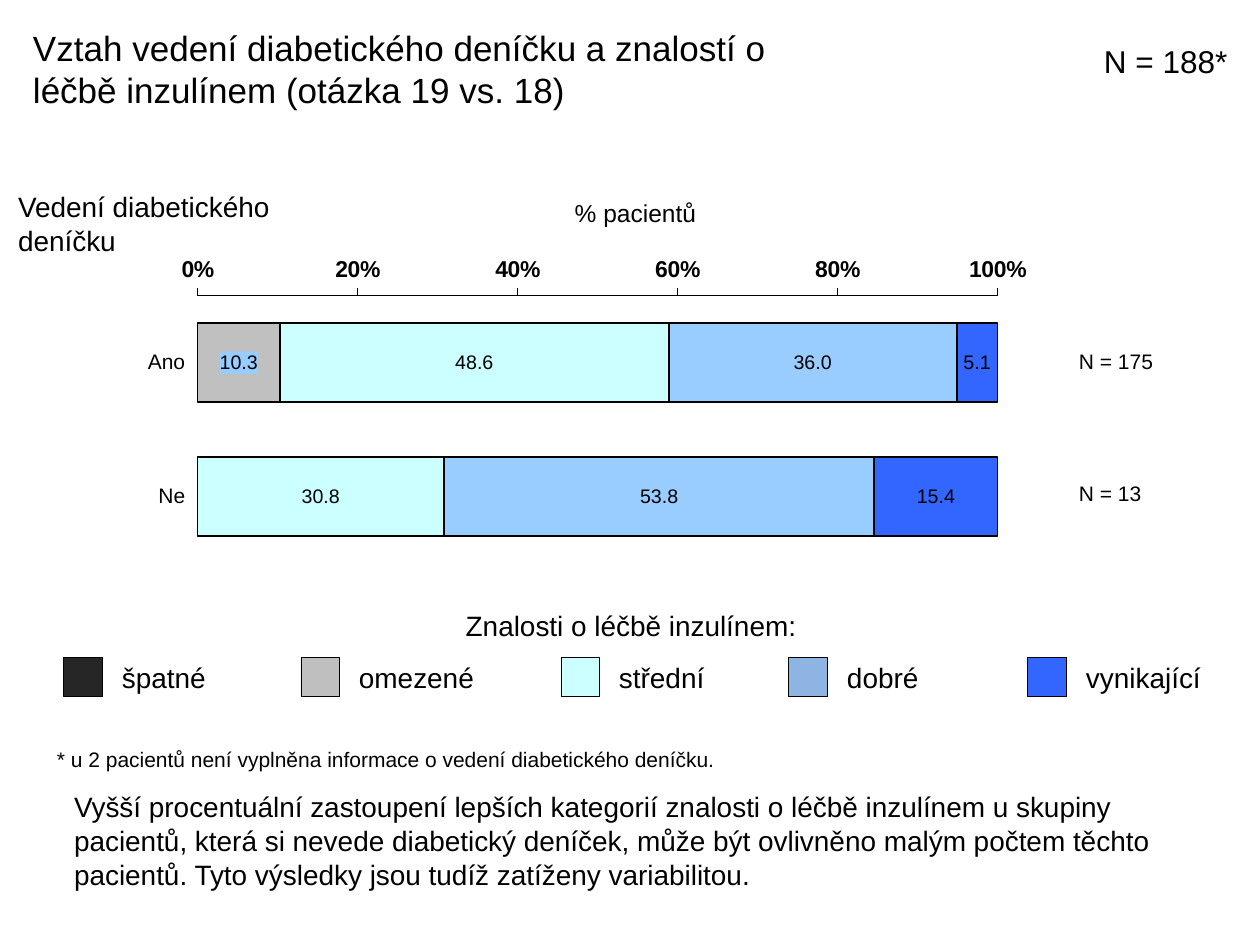
"""Build a slide on diary keeping and knowledge of insulin treatment."""
import pptx
import pptx.chart.data
import pptx.dml.color
import pptx.enum.chart
import pptx.enum.shapes
import pptx.enum.text
import pptx.oxml
import pptx.oxml.ns
import pptx.util

HUES = {
    "ink": "000000", "poor": "262626", "weak": "C0C0C0", "weak key": "BFBFBF",
    "fair": "CCFFFF", "good": "99CCFF", "good key": "8EB4E3", "best": "3366FF",
}
ALIGN = pptx.enum.text.PP_ALIGN
ANCHOR = pptx.enum.text.MSO_ANCHOR
PLOT = {"x": 0.133, "y": 0.199, "w": 0.796, "h": 0.766}


def px(count):
    """Turn pixels into EMU."""
    return pptx.util.Emu(round(count * 914400 / 126))


def hue(name):
    """Look up a colour."""
    return pptx.dml.color.RGBColor.from_string(HUES[name])


def style(font, size, bold=False):
    """Set the deck's font at a size."""
    font.name = "Arial"
    font.size = pptx.util.Pt(size)
    font.bold = bold
    font.color.rgb = hue("ink")


def paint(form, fill, width):
    """Give a fill and an ink outline."""
    form.fill.solid()
    form.fill.fore_color.rgb = hue(fill)
    form.line.color.rgb = hue("ink")
    form.line.width = pptx.util.Pt(width)


def write(frame, text, size=16, align=ALIGN.LEFT, anchor=ANCHOR.TOP, inset=(13, 6), wrap=True):
    """Fill a text frame with formatted text."""
    frame.auto_size = pptx.enum.text.MSO_AUTO_SIZE.NONE
    frame.word_wrap = wrap
    frame.vertical_anchor = anchor
    frame.margin_left = frame.margin_right = px(inset[0])
    frame.margin_top = frame.margin_bottom = px(inset[1])
    para = frame.paragraphs[0]
    para.alignment = align
    run = para.add_run()
    run.text = text
    style(run.font, size)


class Deck:
    """Hold the file and its current slide."""

    def __init__(self):
        """Start a file with one titled slide."""
        self.file = pptx.Presentation()
        self.file.slide_width = px(1260)
        self.file.slide_height = px(945)
        self.slide = self.file.slides.add_slide(self.file.slide_layouts[5])

    def title(self, text, *area, **form):
        """Place and fill the title."""
        head = self.slide.shapes.title
        head.left, head.top, head.width, head.height = map(px, area)
        write(head.text_frame, text, **form)

    def text(self, text, *area, **form):
        """Add a text box."""
        box = self.slide.shapes.add_textbox(*map(px, area))
        write(box.text_frame, text, **form)

    def key(self, text, fill, left, top, side=39):
        """Add a legend swatch and its label."""
        kind = pptx.enum.shapes.MSO_SHAPE.RECTANGLE
        box = self.slide.shapes.add_shape(kind, *map(px, (left, top, side, side)))
        box.shadow.inherit = False
        paint(box, fill, 0.5)
        self.text(text, left + 48, top, 139, side, anchor=ANCHOR.MIDDLE, inset=(10, 10), wrap=False)

    def chart(self, cats, rows, *area):
        """Add a full-width stacked bar chart."""
        data = pptx.chart.data.CategoryChartData()
        data.categories = cats
        for num, (fill, vals) in enumerate(rows, 1):
            data.add_series(f"Series {num}", vals)
        kind = pptx.enum.chart.XL_CHART_TYPE.BAR_STACKED_100
        chart = self.slide.shapes.add_chart(kind, *map(px, area), data).chart
        chart.has_legend = chart.has_title = False
        style(chart.font, 11.5)
        self.axes(chart)
        plot = chart.plots[0]
        plot.gap_width, plot.overlap, plot.vary_by_categories = 70, 100, False
        for line, (fill, vals) in zip(plot.series, rows):
            paint(line.format, fill, 0.94)
            tags = line.data_labels
            tags.show_value = True
            tags.number_format, tags.number_format_is_linked = "0.0", False
            tags.position = pptx.enum.chart.XL_LABEL_POSITION.CENTER
            style(tags.font, 11.2)
        self.shade(plot.series[0].data_labels, "good")
        self.fit(chart)

    def axes(self, chart):
        """Format both axes."""
        marks = pptx.enum.chart.XL_TICK_MARK
        cat, val = chart.category_axis, chart.value_axis
        cat.reverse_order = True
        cat.major_tick_mark = marks.OUTSIDE
        cat.format.line.fill.background()
        style(cat.tick_labels.font, 12)
        val.has_major_gridlines = False
        val.minimum_scale, val.maximum_scale, val.major_unit = 0, 1, 0.2
        val.major_tick_mark = marks.OUTSIDE
        val.format.line.color.rgb = hue("ink")
        val.format.line.width = pptx.util.Pt(0.23)
        val.tick_labels.number_format = "0%"
        val.tick_labels.number_format_is_linked = False
        style(val.tick_labels.font, 13.1, bold=True)

    def shade(self, tags, fill):
        """Put a fill behind data labels."""
        spaces = pptx.oxml.ns.nsdecls("c", "a")
        node = pptx.oxml.parse_xml(
            f'<c:spPr {spaces}><a:solidFill><a:srgbClr val="{HUES[fill]}"/></a:solidFill></c:spPr>')
        tags._element.find(pptx.oxml.ns.qn("c:txPr")).addprevious(node)

    def fit(self, chart):
        """Fix the inner plot area."""
        area = chart._chartSpace.chart.plotArea
        for old in area.findall(pptx.oxml.ns.qn("c:layout")):
            area.remove(old)
        modes = "".join(f'<c:{side}Mode val="edge"/>' for side in "xy")
        sizes = "".join(f'<c:{side} val="{part}"/>' for side, part in PLOT.items())
        area.insert(0, pptx.oxml.parse_xml(
            f'<c:layout {pptx.oxml.ns.nsdecls("c")}><c:manualLayout>'
            f'<c:layoutTarget val="inner"/>{modes}{sizes}</c:manualLayout></c:layout>'))


def main():
    """Build and save the slide."""
    deck = Deck()
    deck.title("Vztah vedení diabetického deníčku a znalostí o léčbě inzulínem (otázka 19 vs. 18)",
               20, 20, 848, 69, size=20)
    deck.chart(("Ano", "Ne"), (
        ("weak", (10.3, None)),
        ("fair", (48.6, 30.8)),
        ("good", (36, 53.8)),
        ("best", (5.1, 15.4)),
    ), 64, 226, 1005, 350)
    deck.text("N = 188*", 1091, 36, 164, 50, size=18)
    deck.text("% pacientů", 541, 192, 189, 43, size=14, align=ALIGN.CENTER)
    deck.text("Vedení diabetického deníčku", 5, 184, 297, 81)
    for text, top in (("N = 175", 342), ("N = 13", 474)):
        deck.text(text, 1066, top, 100, 39, size=12, anchor=ANCHOR.MIDDLE, wrap=False)
    deck.text("Znalosti o léčbě inzulínem:", 451, 602, 360, 47, align=ALIGN.CENTER, wrap=False)
    for text, fill, left in (
        ("špatné", "poor", 64), ("omezené", "weak key", 301), ("střední", "fair", 561),
        ("dobré", "good key", 789), ("vynikající", "best", 1028),
    ):
        deck.key(text, fill, left, 658)
    deck.text("* u 2 pacientů není vyplněna informace o vedení diabetického deníčku.",
              44, 741, 921, 38, size=12)
    deck.text("Vyšší procentuální zastoupení lepších kategorií znalosti o léčbě inzulínem u skupiny "
              "pacientů, která si nevede diabetický deníček, může být ovlivněno malým počtem těchto "
              "pacientů. Tyto výsledky jsou tudíž zatíženy variabilitou.",
              64, 780, 1142, 125, inset=(10, 10))
    deck.file.save("out.pptx")


if __name__ == "__main__":
    main()
